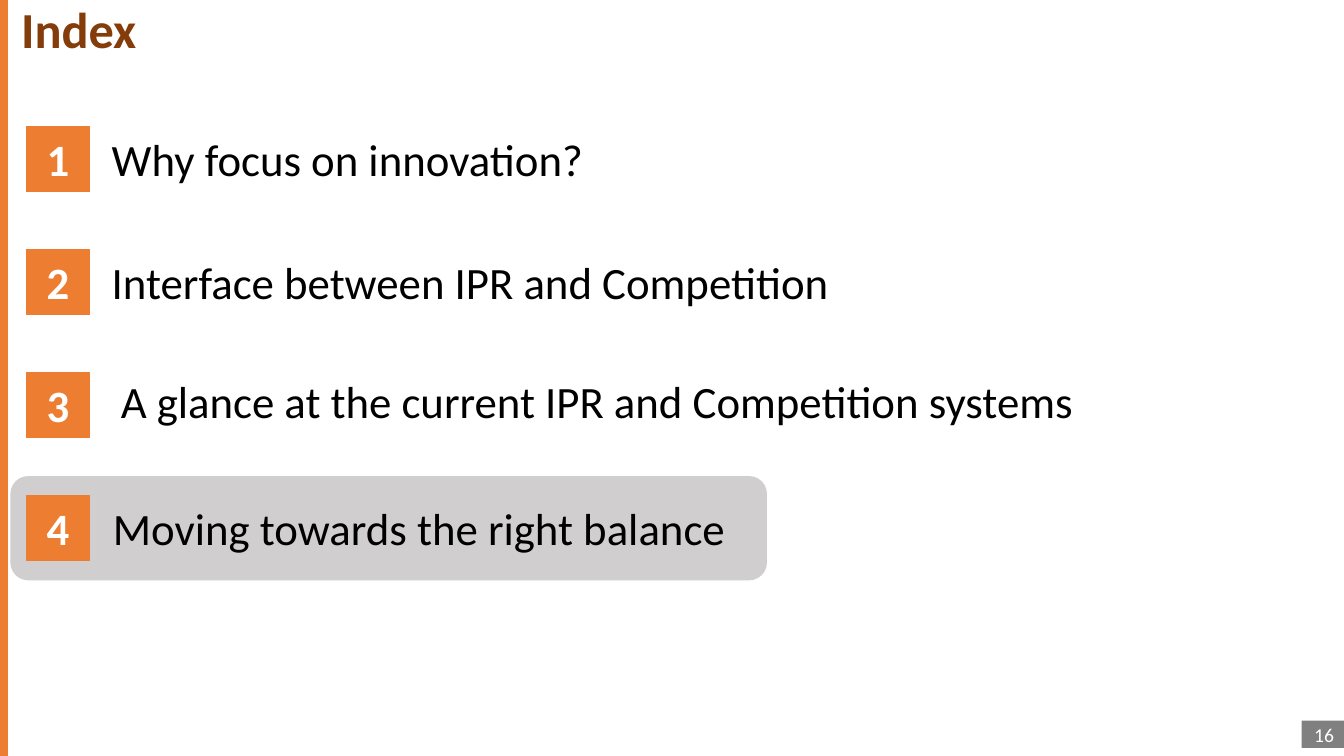
from lxml.etree import SubElement
from pptx import Presentation
from pptx.dml.color import RGBColor
from pptx.enum.shapes import MSO_CONNECTOR as Connector, MSO_SHAPE as Shape
from pptx.enum.text import MSO_ANCHOR as Anchor, MSO_AUTO_SIZE as AutoSize, PP_ALIGN as Align
from pptx.oxml.ns import qn
from pptx.util import Inches, Pt

WHITE = RGBColor(0xFF, 0xFF, 0xFF)
BLACK = RGBColor(0, 0, 0)
ORANGE = RGBColor(0xED, 0x7D, 0x31)
BROWN = RGBColor(0x84, 0x3C, 0x0B)
GRAY = RGBColor(0x80, 0x80, 0x80)
SILVER = RGBColor(0xD0, 0xCE, 0xCE)

WIDTH, HEIGHT = 13.33, 7.5
FIRST_ROW, ROW_PITCH, ROW_HEIGHT = 1.26, 1.22, 0.64
NUMBER_LEFT, NUMBER_WIDTH, LABEL_LEFT = 0.26, 0.63, 1.01
BAND_LEFT, BAND_WIDTH, BAND_HEIGHT = 0.11, 7.49, 1.02

# Label, its width, and its offset right and down from the grid
ENTRIES = [
    ("Why focus on innovation?", 9.39, 0, 0),
    ("Interface between IPR and Competition", 9.39, 0, 0),
    ("A glance at the current IPR and Competition systems", 10.67, 0.09, -0.04),
    ("Moving towards the right balance", 10.05, 0.01, 0),
]
CURRENT = 3


def row_top(index):
    return FIRST_ROW + index * ROW_PITCH


class IndexSlide:
    font_name = "Calibri"

    def __init__(self, deck):
        self.slide = deck.slides.add_slide(deck.slide_layouts[5])
        self.shapes = self.slide.shapes

    def set_text(self, box, text, size, color, bold=False, align=Align.LEFT, anchor=Anchor.TOP):
        frame = box.text_frame
        frame.text = text
        frame.word_wrap = True
        frame.auto_size = AutoSize.NONE
        frame.vertical_anchor = anchor
        para = frame.paragraphs[0]
        para.alignment = align
        font = para.runs[0].font
        font.name, font.size, font.bold = self.font_name, Pt(size), bold
        font.color.rgb = color
        return para

    def title(self, text):
        box = self.shapes.title
        box.left, box.top = Inches(BAND_LEFT), 0
        box.width, box.height = Inches(WIDTH - BAND_LEFT), Inches(1.45)
        self.set_text(box, text, 36, BROWN, bold=True).line_spacing = 0.9

    def edge(self, x, color, weight):
        """Draw a vertical line over the full height of the slide."""
        line = self.shapes.add_connector(
            Connector.STRAIGHT, Inches(x), 0, Inches(x), Inches(HEIGHT))
        line.line.color.rgb = color
        line.line.width = Pt(weight)
        SubElement(line._element.spPr, qn("a:effectLst"))

    def panel(self, kind, left, top, width, height, color, border=0):
        box = self.shapes.add_shape(
            kind, Inches(left), Inches(top), Inches(width), Inches(height))
        box.shadow.inherit = False
        box.fill.solid()
        box.fill.fore_color.rgb = color
        if border:
            box.line.color.rgb = color
            box.line.width = Pt(border)
        else:
            box.line.fill.background()
        return box

    def page_number(self, text):
        box = self.panel(Shape.RECTANGLE, WIDTH - 0.42, 7.15, 0.42, 0.27, GRAY)
        self.set_text(box, text, 14, WHITE, align=Align.RIGHT, anchor=Anchor.MIDDLE)

    def highlight(self, index):
        top = row_top(index) + (ROW_HEIGHT - BAND_HEIGHT) / 2
        self.panel(Shape.ROUNDED_RECTANGLE, BAND_LEFT, top,
                   BAND_WIDTH, BAND_HEIGHT, SILVER, border=1)

    def entry(self, index, text, width, right, down):
        top = row_top(index)
        number = self.panel(Shape.RECTANGLE, NUMBER_LEFT, top,
                            NUMBER_WIDTH, ROW_HEIGHT, ORANGE, border=0.75)
        self.set_text(number, str(index + 1), 32, WHITE, bold=True, align=Align.CENTER)
        label = self.shapes.add_textbox(
            Inches(LABEL_LEFT + right), Inches(top + down), Inches(width), Inches(ROW_HEIGHT))
        self.set_text(label, text, 32, BLACK)


def main():
    deck = Presentation()
    deck.slide_width, deck.slide_height = Inches(WIDTH), Inches(HEIGHT)
    page = IndexSlide(deck)
    page.edge(0.04, ORANGE, 6)
    page.page_number("16")
    page.highlight(CURRENT)
    page.title("Index")
    for index, entry in enumerate(ENTRIES):
        page.entry(index, *entry)
    deck.save("out.pptx")


if __name__ == "__main__":
    main()
